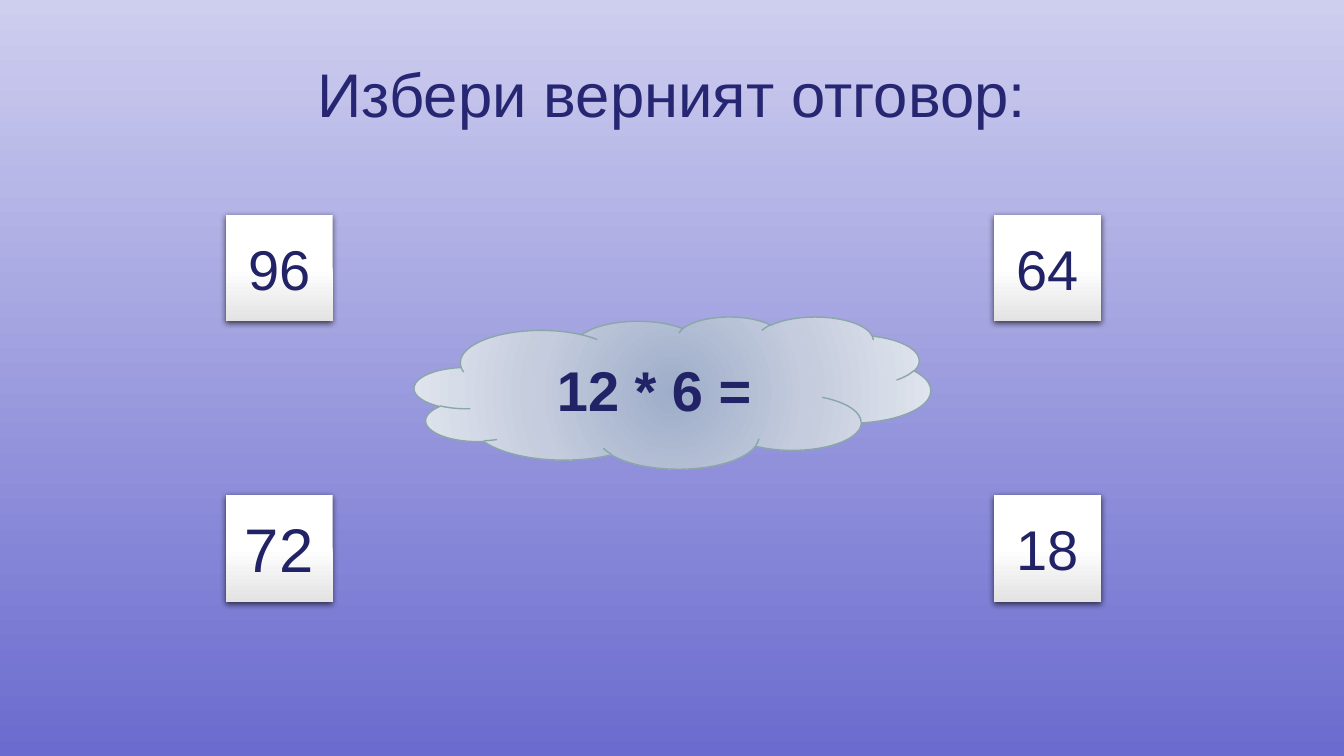
"""Build a multiplication quiz slide with four answer buttons around a cloud."""
from dataclasses import dataclass

from lxml.etree import SubElement as Sub
from pptx import Presentation
from pptx.dml.color import RGBColor
from pptx.enum.shapes import MSO_SHAPE as Preset
from pptx.enum.text import MSO_ANCHOR as Anchor, PP_ALIGN as Align
from pptx.oxml.ns import qn
from pptx.util import Inches, Pt


@dataclass(frozen=True)
class Theme:
    font: str = "Arial"
    title: str = "262673"
    text: str = "222267"
    outline: str = "8AA6A8"
    shadow: str = "000000"
    sky: tuple = ((0, "CECEEF"), (100, "6B6BCF"))
    button: tuple = ((0, "FFFFFF"), (50, "FFFFFF"), (100, "E3E3E3"))
    cloud: tuple = ((0, "9EADC9"), (50, "C4CCDD"), (100, "E2E6EE"))
    large: int = 44
    normal: int = 40


def paint(owner, fill, stops, radial=False):
    fill.gradient()
    fill.gradient_angle = 270
    gradient = next(owner.element.iter(qn("a:gradFill")))
    stop_list = gradient.find(qn("a:gsLst"))
    for old_stop in list(stop_list):
        stop_list.remove(old_stop)
    for share, color in stops:
        stop = Sub(stop_list, qn("a:gs"), pos=str(share * 1000))
        Sub(stop, qn("a:srgbClr"), val=color)
    if radial:
        gradient.remove(gradient.find(qn("a:lin")))
        circle = Sub(gradient, qn("a:path"), path="circle")
        Sub(circle, qn("a:fillToRect"), l="50000", t="50000", r="50000", b="50000")


def write(shape, text, size, color, bold=False):
    frame = shape.text_frame
    frame.word_wrap = True
    frame.vertical_anchor = Anchor.MIDDLE
    para = frame.paragraphs[0]
    para.alignment = Align.CENTER
    span = para.add_run()
    span.text = text
    span.font.name = theme.font
    span.font.size = Pt(size)
    span.font.bold = bold
    span.font.color.rgb = RGBColor.from_string(color)


theme = Theme()
deck = Presentation()
deck.slide_width, deck.slide_height = Inches(13.33), Inches(7.5)
page = deck.slides.add_slide(deck.slide_layouts[5])
paint(page, page.background.fill, theme.sky)

title = page.shapes.title
title.left, title.top = int(deck.slide_width * 0.05), int(deck.slide_height * 0.04)
title.width, title.height = int(deck.slide_width * 0.9), Inches(1.25)
write(title, "Избери верният отговор:", theme.large, theme.title)

cloud = page.shapes.add_shape(
    Preset.CLOUD, Inches(4.11), Inches(3.14), Inches(5.12), Inches(1.51))
paint(cloud, cloud.fill, theme.cloud, radial=True)
cloud.line.color.rgb = RGBColor.from_string(theme.outline)
cloud.line.width = Pt(1)
cloud.shadow.inherit = False
write(cloud, "12 * 6 =", theme.normal, theme.text, bold=True)

first_column, first_row = 2.24, 2.13
column_step, row_step = 7.62, 2.78
side = Inches(1.06)
answers = (
    (("96", theme.normal), ("64", theme.normal)),
    (("72", theme.large), ("18", theme.normal)),
)
for row, pair in enumerate(answers):
    for column, (answer, size) in enumerate(pair):
        button = page.shapes.add_shape(
            Preset.ACTION_BUTTON_CUSTOM,
            Inches(first_column + column * column_step),
            Inches(first_row + row * row_step), side, side)
        paint(button, button.fill, theme.button)
        button.line.fill.background()
        button.shadow.inherit = False
        effects = next(button.element.iter(qn("a:effectLst")))
        shadow = Sub(effects, qn("a:outerShdw"), blurRad=str(Pt(4.5)),
                     dist=str(Pt(1.5)), dir="5400000", rotWithShape="0")
        shade = Sub(shadow, qn("a:srgbClr"), val=theme.shadow)
        Sub(shade, qn("a:alpha"), val="63000")
        write(button, answer, size, theme.text)

deck.save("out.pptx")
